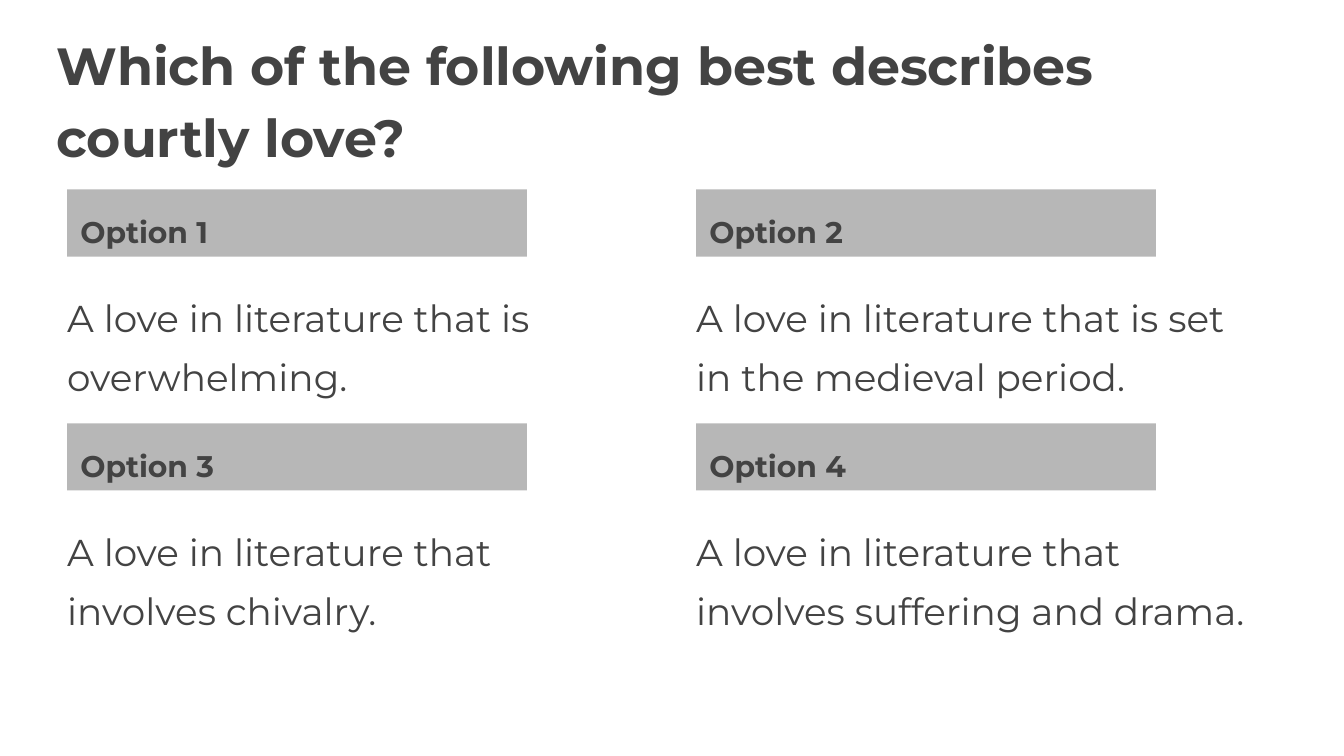
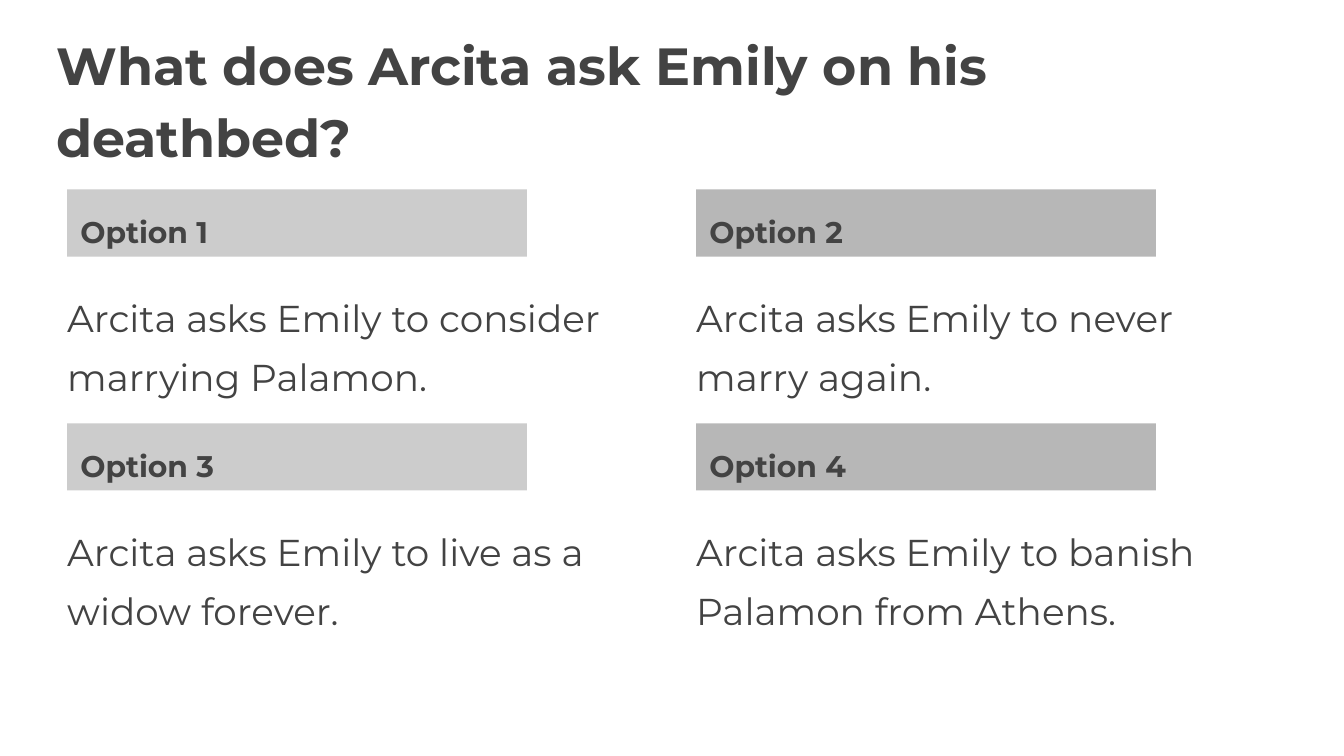
from dataclasses import dataclass

from pptx import Presentation
from pptx.dml.color import RGBColor
from pptx.enum.shapes import MSO_SHAPE as Shape
from pptx.enum.text import MSO_ANCHOR as Anchor, PP_ALIGN as Align
from pptx.util import Inches, Pt


@dataclass(frozen=True)
class Theme:
    font: str = "Montserrat"
    ink: str = "434343"
    paper: str = "FFFFFF"
    band: str = "B7B7B7"
    light_band: str = "CCCCCC"
    title_size: int = 28
    label_size: int = 16
    answer_size: int = 20


THEME = Theme()

# Grid of answers: two columns by two rows
COLUMN_LEFTS = (0.5, 5.18)
ANSWER_WIDTHS = (3.99, 4.25)
FIRST_ROW, ROW_STEP = 1.41, 1.74
BAND_WIDTH, BAND_HEIGHT = 3.42, 0.5
ANSWER_OFFSET, ANSWER_HEIGHT = 0.69, 0.93

# Each question: title, band colours by column, answers row by row
QUESTIONS = [
    ("Which of the following best describes courtly love?",
     (THEME.band, THEME.band),
     ["A love in literature that is overwhelming.",
      "A love in literature that is set in the medieval period.",
      "A love in literature that involves chivalry.",
      "A love in literature that involves suffering and drama."]),
    ("What does Arcita ask Emily on his deathbed?",
     (THEME.light_band, THEME.band),
     ["Arcita asks Emily to consider marrying Palamon.",
      "Arcita asks Emily to never marry again.",
      "Arcita asks Emily to live as a widow forever.",
      "Arcita asks Emily to banish Palamon from Athens."]),
]


def write(sp, text, size, bold=False, spacing=1.3, after=0, inset=0):
    """Fill a shape or text box with one formatted paragraph."""
    tf = sp.text_frame
    tf.word_wrap = True
    tf.vertical_anchor = Anchor.TOP
    tf.margin_left = tf.margin_right = Inches(inset)
    tf.margin_top = tf.margin_bottom = Inches(inset)
    p = tf.paragraphs[0]
    p.alignment = Align.LEFT
    p.line_spacing = spacing
    p.space_after = Pt(after)
    r = p.add_run()
    r.text = text
    r.font.name = THEME.font
    r.font.size = Pt(size)
    r.font.bold = bold
    r.font.color.rgb = RGBColor.from_string(THEME.ink)


def add_title(s, text):
    sp = s.shapes.add_textbox(Inches(0.42), Inches(0.18), Inches(8.43), Inches(1.28))
    write(sp, text, THEME.title_size, bold=True, spacing=1.15)


def add_band(s, left, top, label, fill):
    sp = s.shapes.add_shape(Shape.RECTANGLE, Inches(left), Inches(top),
                            Inches(BAND_WIDTH), Inches(BAND_HEIGHT))
    sp.shadow.inherit = False
    sp.fill.solid()
    sp.fill.fore_color.rgb = RGBColor.from_string(fill)
    sp.line.fill.background()
    write(sp, label, THEME.label_size, bold=True, inset=0.1)


def add_answer(s, left, top, width, text):
    sp = s.shapes.add_textbox(Inches(left), Inches(top), Inches(width), Inches(ANSWER_HEIGHT))
    write(sp, text, THEME.answer_size, after=10)


def add_question(prs, title, fills, answers):
    s = prs.slides.add_slide(prs.slide_layouts[6])
    s.background.fill.solid()
    s.background.fill.fore_color.rgb = RGBColor.from_string(THEME.paper)
    add_title(s, title)
    for i, answer in enumerate(answers):
        row, col = divmod(i, 2)
        left, top = COLUMN_LEFTS[col], FIRST_ROW + row * ROW_STEP
        add_band(s, left, top, f"Option {i + 1}", fills[col])
        add_answer(s, left, top + ANSWER_OFFSET, ANSWER_WIDTHS[col], answer)


def main():
    prs = Presentation()
    # Widescreen, 16:9
    prs.slide_width, prs.slide_height = Inches(10), Inches(10 * 9 / 16)
    for title, fills, answers in QUESTIONS:
        add_question(prs, title, fills, answers)
    prs.save("out.pptx")


if __name__ == "__main__":
    main()
